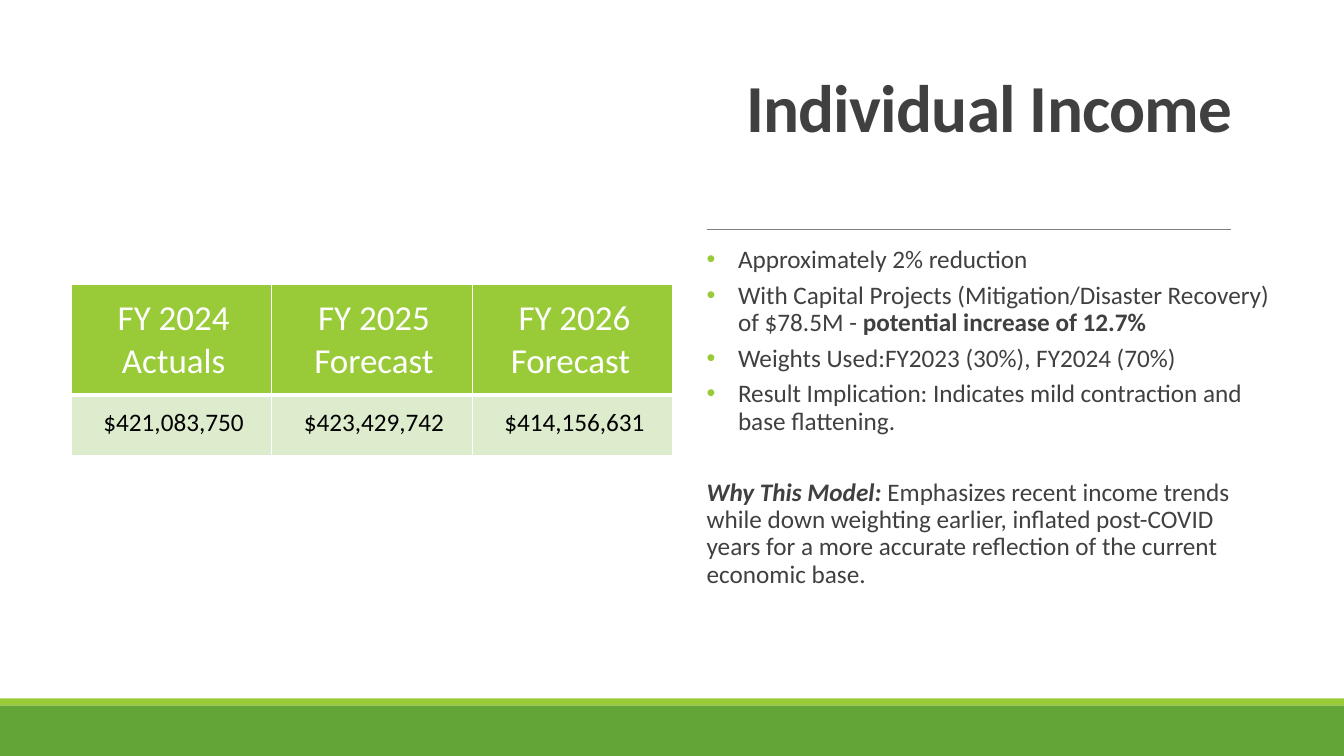
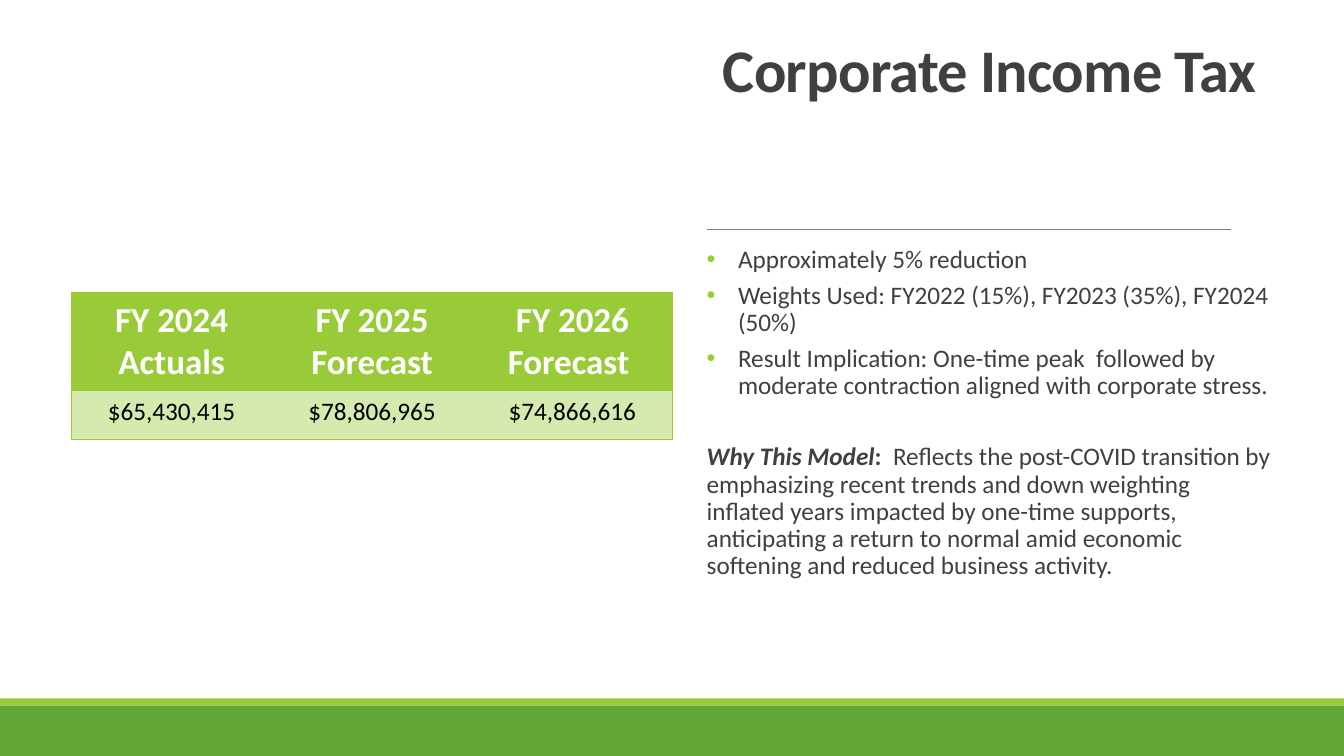
import pptx
import pptx.dml.color
import pptx.enum.shapes
import pptx.enum.text
import pptx.oxml
import pptx.oxml.ns
import pptx.util
from lxml import etree
from pptx.util import Cm, Pt

LIME, GREEN, INK, WHITE, GREY = "99CB38", "63A537", "404040", "FFFFFF", "808080"
FONT = "Calibri"
DRAWING = pptx.oxml.ns.nsdecls("a")
TEXT_LEFT, TEXT_WIDTH, RULE_TOP = 17.81, 14.25, 5.79
COLUMN_WIDTH = 5.05
HEADINGS = ["FY 2024 Actuals", "FY 2025 Forecast", "FY 2026 Forecast "]
CENTER = pptx.enum.text.PP_ALIGN.CENTER
MIDDLE, TOP = pptx.enum.text.MSO_ANCHOR.MIDDLE, pptx.enum.text.MSO_ANCHOR.TOP

# Borders are (colour, points) for each side of a cell; a side left out has no line.
WHITE_LINE, LIME_LINE = (WHITE, 1), (LIME, 1)
WHITE_GRID = {side: WHITE_LINE for side in "LRTB"}

topics = [
    {
        "title": "Individual Income", "title_top": 1.84, "title_size": 48,
        "bullets": [
            [("Approximately 2% reduction", "")],
            [("With Capital Projects (Mitigation/Disaster Recovery) of $78.5M - ", ""),
             ("potential increase of 12.7%", "b")],
            [("Weights Used:FY2023 (30%), FY2024 (70%)", "")],
            [("Result Implication: Indicates mild contraction and base flattening.", "")],
        ],
        "reason": [
            ("Why This Model: ", "bi"),
            ("Emphasizes recent income trends while down weighting earlier, inflated "
             "post-COVID years for a more accurate reflection of the current economic base.", ""),
        ],
        "amounts": ["$421,083,750", "$423,429,742", "$414,156,631"],
        "table_top": 7.17, "row_heights": [2.77, 1.53],
        "margins": [0.43, 0.33, 0.33, 0.33],
        "heading_bold": False, "heading_anchor": MIDDLE, "amount_fill": "DEECCE",
        "borders": [[{**WHITE_GRID, "B": (WHITE, 3)}] * 3,
                    [{**WHITE_GRID, "T": (WHITE, 3)}] * 3],
    },
    {
        "title": "Corporate Income Tax", "title_top": 0.97, "title_size": 43.2,
        "bullets": [
            [("Approximately 5% reduction", "")],
            [("Weights Used: FY2022 (15%), FY2023 (35%), FY2024 (50%)", "")],
            [("Result Implication: One-time peak  followed by moderate contraction "
              "aligned with corporate stress.", "")],
        ],
        "reason": [
            ("Why This Model", "bi"),
            (":", "b"),
            ("  Reflects the post-COVID transition by emphasizing recent trends and down "
             "weighting inflated years impacted by one-time supports, anticipating a return "
             "to normal amid economic softening and reduced business activity.", ""),
        ],
        "amounts": ["$65,430,415", "$78,806,965", "$74,866,616"],
        "table_top": 7.38, "row_heights": [2.45, 1.24],
        "margins": [0.28, 0.15, 0.28, 0.15],
        "heading_bold": True, "heading_anchor": TOP, "amount_fill": "D6EAAF",
        "borders": [[{"T": LIME_LINE, "B": LIME_LINE, **outer}
                     for outer in ({"L": LIME_LINE}, {}, {"R": LIME_LINE})]] * 2,
    },
]


def rgb(hex_colour):
    return pptx.dml.color.RGBColor.from_string(hex_colour)


def style(font, size, colour, bold=False, italic=False):
    font.name, font.size = FONT, Pt(size)
    font.bold, font.italic = bold, italic
    font.color.rgb = rgb(colour)


deck = pptx.Presentation()
deck.slide_width, deck.slide_height = Cm(33.87), Cm(19.05)

for topic in topics:
    slide = deck.slides.add_slide(deck.slide_layouts[6])

    # Footer bands
    for top, height, colour in [(17.6, 0.18, LIME), (17.78, 1.27, GREEN)]:
        band = slide.shapes.add_shape(pptx.enum.shapes.MSO_SHAPE.RECTANGLE,
                                      0, Cm(top), deck.slide_width, Cm(height))
        band.shadow.inherit = False
        band.fill.solid()
        band.fill.fore_color.rgb = rgb(colour)
        band.line.fill.background()

    # Title and the rule below it
    title = slide.shapes.add_textbox(Cm(TEXT_LEFT), Cm(topic["title_top"]),
                                     Cm(TEXT_WIDTH), Cm(2)).text_frame
    title.word_wrap = True
    title.text = topic["title"]
    heading = title.paragraphs[0]
    heading.alignment, heading.line_spacing = CENTER, 0.85
    style(heading.runs[0].font, topic["title_size"], INK, bold=True)
    heading.runs[0]._r.get_or_add_rPr().set("spc", "-50")

    rule = slide.shapes.add_connector(pptx.enum.shapes.MSO_CONNECTOR.STRAIGHT,
                                      Cm(TEXT_LEFT), Cm(RULE_TOP), Cm(31.01), Cm(RULE_TOP))
    rule.line.width = Pt(0.5)
    rule.line.color.rgb = rgb(GREY)
    etree.SubElement(rule._element.spPr, pptx.oxml.ns.qn("a:effectLst"))

    # Bullets, then the reason for the model
    body = slide.shapes.add_textbox(Cm(TEXT_LEFT), Cm(6.1), Cm(TEXT_WIDTH), Cm(10.19)).text_frame
    body.word_wrap = True
    body.margin_left = body.margin_right = 0
    for index, passage in enumerate(topic["bullets"] + [topic["reason"]]):
        paragraph = body.add_paragraph() if index else body.paragraphs[0]
        paragraph.line_spacing, paragraph.space_after = 0.9, Pt(6)
        if passage is topic["reason"]:
            paragraph.space_before = Pt(25.5)
        else:
            properties = paragraph._p.get_or_add_pPr()
            properties.set("marL", str(Cm(0.79)))
            properties.set("indent", str(-Cm(0.79)))
            for bullet in (f'<a:buClr {DRAWING}><a:srgbClr val="{LIME}"/></a:buClr>',
                           f'<a:buFont {DRAWING} typeface="Arial"/>',
                           f'<a:buChar {DRAWING} char="•"/>'):
                properties.append(pptx.oxml.parse_xml(bullet))
        for words, emphasis in passage:
            run = paragraph.add_run()
            run.text = words
            style(run.font, 18, INK, bold="b" in emphasis, italic="i" in emphasis)

    # Table of actuals and forecasts
    table = slide.shapes.add_table(2, 3, Cm(1.8), Cm(topic["table_top"]), Cm(3 * COLUMN_WIDTH),
                                   Cm(sum(topic["row_heights"]))).table
    table.horz_banding = False
    for column in table.columns:
        column.width = Cm(COLUMN_WIDTH)
    for row_index, texts in enumerate([HEADINGS, topic["amounts"]]):
        is_heading = row_index == 0
        table.rows[row_index].height = Cm(topic["row_heights"][row_index])
        for column_index, text in enumerate(texts):
            cell = table.cell(row_index, column_index)
            cell.text = text
            (cell.margin_left, cell.margin_top,
             cell.margin_right, cell.margin_bottom) = map(Cm, topic["margins"])
            cell.vertical_anchor = topic["heading_anchor"] if is_heading else TOP
            paragraph = cell.text_frame.paragraphs[0]
            paragraph.alignment = CENTER
            if is_heading:
                style(paragraph.runs[0].font, 25, WHITE, bold=topic["heading_bold"])
            else:
                style(paragraph.runs[0].font, 18, "000000")

            borders = topic["borders"][row_index][column_index]
            for side in "LRTB":
                colour, points = borders.get(side, (None, 0))
                paint = (f'<a:solidFill><a:srgbClr val="{colour}"/></a:solidFill>'
                         if colour else "<a:noFill/>")
                cell._tc.get_or_add_tcPr().append(pptx.oxml.parse_xml(
                    f'<a:ln{side} {DRAWING} w="{Pt(points)}">{paint}</a:ln{side}>'))
            cell.fill.solid()
            cell.fill.fore_color.rgb = rgb(LIME if is_heading else topic["amount_fill"])

deck.save("out.pptx")
